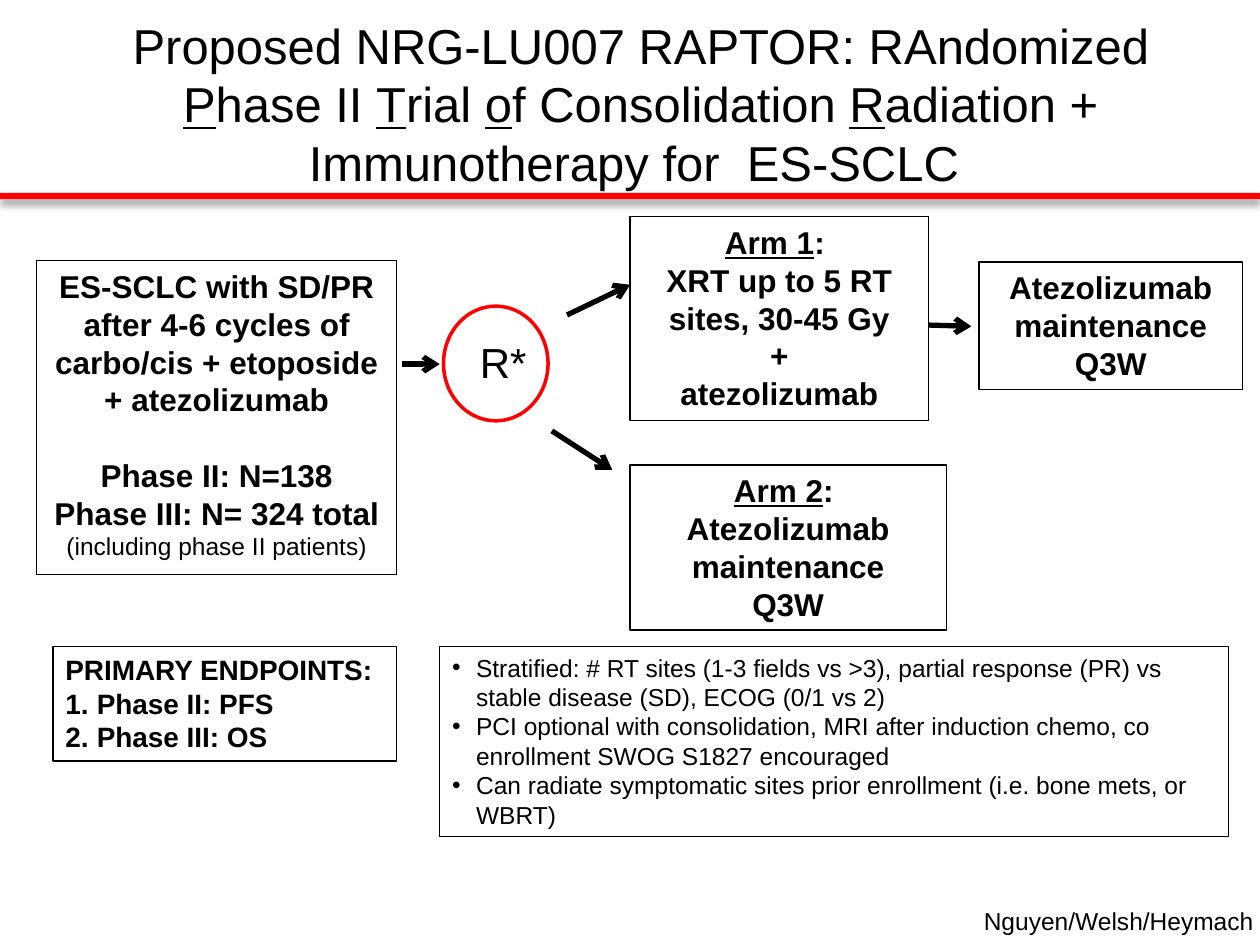
from dataclasses import dataclass

from lxml.etree import SubElement
from pptx import Presentation
from pptx.dml.color import RGBColor
from pptx.enum.shapes import MSO_CONNECTOR, MSO_SHAPE
from pptx.enum.text import MSO_ANCHOR, MSO_AUTO_SIZE, PP_ALIGN
from pptx.oxml.ns import qn
from pptx.util import Inches, Pt

COLUMNS, ROWS = 100, 75
BLACK, RED = "000000", "FF0000"
COLUMN, ROW = Inches(10) / COLUMNS, Inches(7.5) / ROWS


@dataclass
class Box:
    left: float
    top: float
    width: float
    height: float

    def inner(self, left, top, width, height):
        return Box(self.left + left, self.top + top, width, height)

    def point(self, column, row):
        return int((self.left + column) * COLUMN), int((self.top + row) * ROW)

    def lengths(self):
        return (*self.point(0, 0), int(self.width * COLUMN), int(self.height * ROW))


def color(value):
    return RGBColor.from_string(value)


def add_outline(slide, box, line=BLACK, width=0.75, preset=MSO_SHAPE.RECTANGLE):
    shape = slide.shapes.add_shape(preset, *box.lengths())
    shape.shadow.inherit = False
    shape.fill.background()
    shape.line.color.rgb = color(line)
    shape.line.width = Pt(width)
    return shape


def write(shape, texts, size, bold=False, align=PP_ALIGN.LEFT,
          anchor=MSO_ANCHOR.TOP, wrap=True, grow=True):
    frame = shape.text_frame
    frame.word_wrap = wrap
    frame.vertical_anchor = anchor
    frame.auto_size = MSO_AUTO_SIZE.SHAPE_TO_FIT_TEXT if grow else MSO_AUTO_SIZE.NONE
    for index, text in enumerate(texts):
        paragraph = frame.add_paragraph() if index else frame.paragraphs[0]
        paragraph.alignment = align
        for position, piece in enumerate(text.split("_")):
            if piece:
                run = paragraph.add_run()
                run.text = piece
                run.font.name = "Arial"
                run.font.size = Pt(size)
                run.font.bold = bold
                run.font.underline = position % 2 == 1
                run.font.color.rgb = color(BLACK)
    return frame.paragraphs


def add_bullet(paragraph, indent, tag, **attributes):
    properties = paragraph._p.get_or_add_pPr()
    properties.set("marL", str(Inches(indent)))
    properties.set("indent", str(-Inches(indent)))
    SubElement(properties, qn("a:buFont"), typeface="Arial")
    SubElement(properties, qn(tag), **attributes)


def add_arrow(slide, box, begin, end):
    arrow = slide.shapes.add_connector(
        MSO_CONNECTOR.STRAIGHT, *box.point(*begin), *box.point(*end))
    arrow.line.color.rgb = color(BLACK)
    arrow.line.width = Pt(3)
    SubElement(arrow.line._get_or_add_ln(), qn("a:tailEnd"), type="arrow")
    SubElement(arrow._element.spPr, qn("a:effectLst"))


def add_header(slide, box):
    rule = slide.shapes.add_shape(
        MSO_SHAPE.RECTANGLE, *box.inner(0, 15.3, box.width, 0.5).lengths())
    rule.fill.solid()
    rule.fill.fore_color.rgb = color(RED)
    rule.line.fill.background()
    rule.shadow.inherit = False
    effects = rule._element.spPr.find(qn("a:effectLst"))
    shadow = SubElement(effects, qn("a:outerShdw"), blurRad=str(Pt(4)),
                        dist=str(Pt(3)), dir="5400000", rotWithShape="0")
    shade = SubElement(shadow, qn("a:srgbClr"), val=BLACK)
    SubElement(shade, qn("a:alpha"), val="40000")

    title = slide.shapes.add_textbox(*box.inner(4.2, 1.7, 93.3, 13).lengths())
    write(title, ["Proposed NRG-LU007 RAPTOR: RAndomized _P_hase II _T_rial _o_f "
                  "Consolidation _R_adiation + Immunotherapy for  ES-SCLC "],
          28, align=PP_ALIGN.CENTER, anchor=MSO_ANCHOR.MIDDLE, grow=False)


def add_population(slide, box):
    paragraphs = write(add_outline(slide, box), [
        "ES-SCLC with SD/PR after 4-6 cycles of carbo/cis + etoposide + atezolizumab",
        "Phase II: N=138",
        "Phase III: N= 324 total",
        "(including phase II patients)",
    ], 18, True, PP_ALIGN.CENTER)
    paragraphs[1].space_before = Pt(21.5)
    note = paragraphs[-1].runs[0].font
    note.size = Pt(14)
    note.bold = False


def add_randomization(slide, box):
    add_outline(slide, box, RED, 2, MSO_SHAPE.OVAL)
    label = slide.shapes.add_textbox(*box.inner(1.9, 1.9, 5.8, 5.1).lengths())
    write(label, ["R*"], 24, wrap=False)


def add_arms(slide, box):
    maintenance = ["Atezolizumab maintenance", "Q3W"]
    arms = [
        (box.inner(0, 0, 23.7, 16.2),
         ["_Arm 1_: ", "XRT up to 5 RT sites, 30-45 Gy", "+", "atezolizumab"]),
        (box.inner(0, 19.7, 25.1, 13.1), ["_Arm 2_: ", *maintenance]),
        (box.inner(27.7, 3.6, 20.9, 10.1), maintenance),
    ]
    for place, texts in arms:
        write(add_outline(slide, place), texts, 18, True, PP_ALIGN.CENTER)
    add_arrow(slide, box, (23.7, 8.6), (27.1, 8.7))


def add_schema(slide, box):
    add_population(slide, box.inner(0, 3.5, 28.6, 24.9))
    add_randomization(slide, box.inner(32.3, 7.1, 8.3, 9.1))
    add_arms(slide, box.inner(47.1, 0, 48.6, 32.8))
    for begin, end in [((29, 11.7), (32, 11.7)),
                       ((42.1, 7.8), (47.1, 5.4)),
                       ((40.9, 17), (45.7, 20.1))]:
        add_arrow(slide, box, begin, end)


def add_details(slide, box):
    endpoints = write(add_outline(slide, box.inner(0, 0, 27.3, 9.1)),
                      ["PRIMARY ENDPOINTS:", "Phase II: PFS", "Phase III: OS"], 16, True)
    for paragraph in endpoints[1:]:
        add_bullet(paragraph, 0.25, "a:buAutoNum", type="arabicPeriod")

    notes = write(add_outline(slide, box.inner(30.7, 0, 62.6, 15.1)), [
        "Stratified: # RT sites (1-3 fields vs >3), partial response (PR) vs "
        "stable disease (SD), ECOG (0/1 vs 2)",
        "PCI optional with consolidation, MRI after induction chemo, "
        "co enrollment SWOG S1827 encouraged",
        "Can radiate symptomatic sites prior enrollment (i.e. bone mets, or WBRT)",
    ], 14)
    for paragraph in notes:
        add_bullet(paragraph, 0.19, "a:buChar", char="•")


def add_credit(slide, box):
    write(slide.shapes.add_textbox(*box.lengths()), ["Nguyen/Welsh/Heymach"], 14)


def main():
    presentation = Presentation()
    presentation.slide_width = int(COLUMNS * COLUMN)
    presentation.slide_height = int(ROWS * ROW)
    slide = presentation.slides.add_slide(presentation.slide_layouts[6])
    add_header(slide, Box(0, 0, COLUMNS, 15.8))
    add_schema(slide, Box(2.9, 17.2, 95.7, 32.8))
    add_details(slide, Box(4.2, 51.3, 93.3, 15.1))
    add_credit(slide, Box(77.1, 71.4, 25.4, 3.4))
    presentation.save("out.pptx")


if __name__ == "__main__":
    main()
